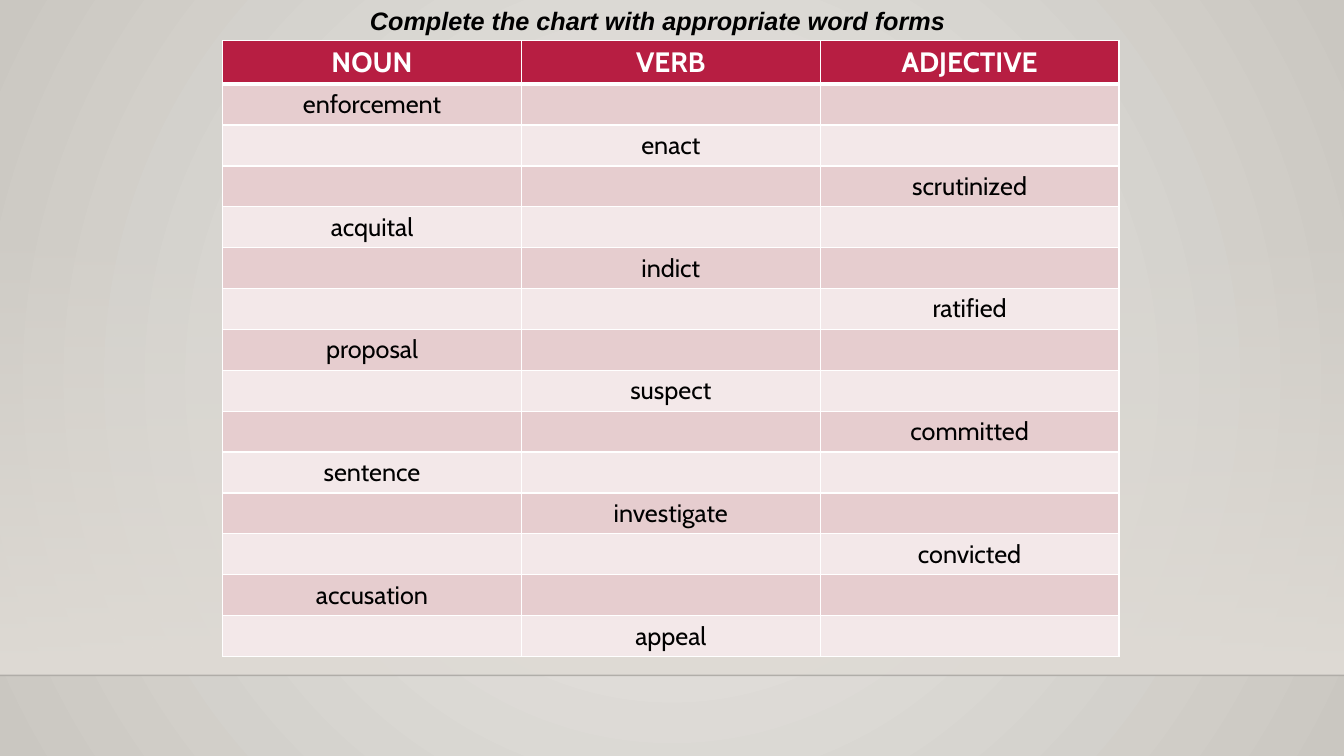
from pptx import Presentation
from pptx.dml.color import RGBColor
from pptx.enum.shapes import MSO_CONNECTOR, MSO_SHAPE
from pptx.enum.text import MSO_ANCHOR, MSO_AUTO_SIZE, PP_ALIGN
from pptx.oxml import parse_xml
from pptx.oxml.ns import nsdecls, qn
from pptx.util import Cm, Pt

TITLE = "Complete the chart with appropriate word forms"
HEADERS = ["NOUN", "VERB", "ADJECTIVE"]
# The given words step through the columns: noun, verb, adjective, noun, ...
WORDS = [
    "enforcement", "enact", "scrutinized", "acquital", "indict",
    "ratified", "proposal", "suspect", "committed", "sentence",
    "investigate", "convicted", "accusation", "appeal",
]
HEADER_FILL, ODD_FILL, EVEN_FILL = "B71E42", "E6CDCF", "F3E8E9"
WHITE, BLACK, FLOOR = "FFFFFF", "000000", "DFDBD5"

SLIDE_W, SLIDE_H = Cm(33.87), Cm(19.05)
FLOOR_TOP, FLOOR_LINE = Cm(5.61), Cm(17.02)
TABLE_LEFT, TABLE_TOP, COL_W = Cm(5.61), Cm(1.02), Cm(7.53)
HEADER_H, ROW_H = Cm(1.1), Cm(1.03)


def rgb(color):
    return RGBColor.from_string(color)


def set_gradient(fill, start, end):
    fill.gradient()
    for stop, color in zip(fill.gradient_stops, (start, end)):
        stop.color.rgb = rgb(color)


def set_alpha(element, percent):
    """Make the first plain colour found in the element transparent."""
    color = next(element.iter(qn("a:srgbClr")))
    color.append(parse_xml(f'<a:alpha {nsdecls("a")} val="{percent * 1000}"/>'))


def format_run(p, text, size, color, font, bold=False, italic=False):
    p.text = text
    f = p.runs[0].font
    f.name, f.size, f.bold, f.italic = font, Pt(size), bold, italic
    f.color.rgb = rgb(color)


def set_borders(cell, bottom):
    """Draw white borders, with the bottom one of the given width in points."""
    tc_pr = cell._tc.get_or_add_tcPr()
    for i, (side, width) in enumerate(zip("LRTB", (1, 1, 1, bottom))):
        tc_pr.insert(i, parse_xml(
            f'<a:ln{side} {nsdecls("a")} w="{Pt(width)}"><a:solidFill>'
            f'<a:srgbClr val="{WHITE}"/></a:solidFill></a:ln{side}>'))


def add_backdrop(s):
    set_gradient(s.background.fill, "ECEAE7", "CAC7C1")
    lin = next(s.element.iter(qn("a:lin")))
    lin.getparent().replace(lin, parse_xml(
        f'<a:path {nsdecls("a")} path="circle"><a:fillToRect '
        'l="50000" t="50000" r="50000" b="50000"/></a:path>'))

    haze = s.shapes.add_shape(
        MSO_SHAPE.RECTANGLE, 0, FLOOR_TOP, SLIDE_W, FLOOR_LINE - FLOOR_TOP)
    haze.shadow.inherit = False
    haze.line.fill.background()
    set_gradient(haze.fill, FLOOR, FLOOR)
    haze.fill.gradient_angle = 270
    set_alpha(haze.element, 0)

    edge = s.shapes.add_connector(
        MSO_CONNECTOR.STRAIGHT, 0, FLOOR_LINE, SLIDE_W, FLOOR_LINE)
    edge.line.width = Pt(1)
    edge.line.color.rgb = rgb(BLACK)
    set_alpha(edge.element, 20)
    edge.element.spPr.append(parse_xml(f'<a:effectLst {nsdecls("a")}/>'))


def add_title(s):
    title = s.shapes.title
    title.left, title.top, title.width, title.height = (
        Cm(9.07), 0, Cm(15.16), Cm(1.02))
    tf = title.text_frame
    tf.word_wrap = False
    tf.auto_size = MSO_AUTO_SIZE.SHAPE_TO_FIT_TEXT
    tf.vertical_anchor = MSO_ANCHOR.TOP
    p = tf.paragraphs[0]
    format_run(p, TITLE, 18, BLACK, "Arial", bold=True, italic=True)
    p.alignment = PP_ALIGN.JUSTIFY


def add_word_table(s):
    n_cols = len(HEADERS)
    table = s.shapes.add_table(
        len(WORDS) + 1, n_cols, TABLE_LEFT, TABLE_TOP,
        COL_W * n_cols, HEADER_H + ROW_H * len(WORDS)).table
    for col in table.columns:
        col.width = COL_W
    for r, row in enumerate(table.rows):
        row.height = ROW_H if r else HEADER_H
        for c, cell in enumerate(row.cells):
            cell.fill.solid()
            p = cell.text_frame.paragraphs[0]
            p.alignment = PP_ALIGN.CENTER
            if r == 0:
                cell.fill.fore_color.rgb = rgb(HEADER_FILL)
                format_run(p, HEADERS[c], 20, WHITE, "Cabin", bold=True)
            else:
                cell.fill.fore_color.rgb = rgb(ODD_FILL if r % 2 else EVEN_FILL)
                if (r - 1) % n_cols == c:
                    format_run(p, WORDS[r - 1], 18, BLACK, "Cabin")
            set_borders(cell, bottom=1 if r else 3)


def main():
    prs = Presentation()
    prs.slide_width, prs.slide_height = SLIDE_W, SLIDE_H
    s = prs.slides.add_slide(prs.slide_layouts[5])
    add_backdrop(s)
    add_title(s)
    add_word_table(s)
    prs.save("out.pptx")


if __name__ == "__main__":
    main()
